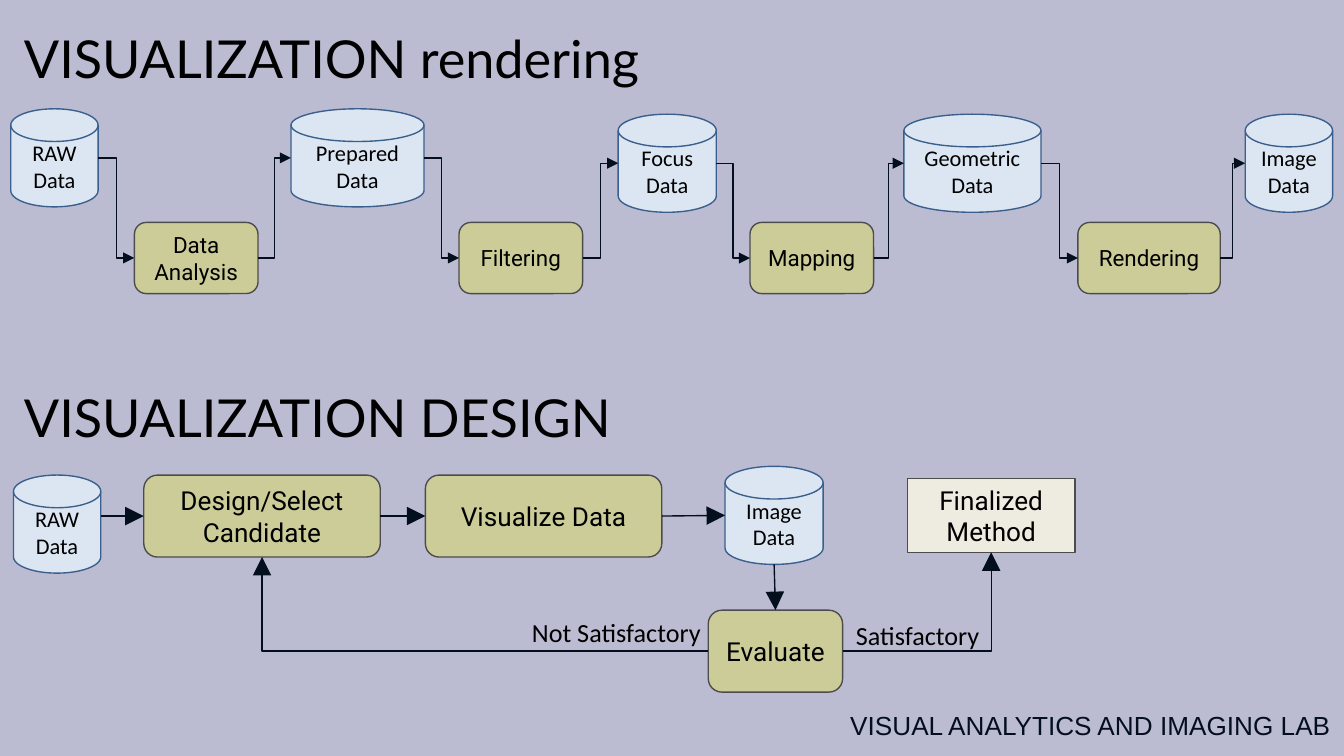
import copy

import pptx
import pptx.dml.color
import pptx.enum.shapes
import pptx.enum.text
import pptx.oxml
import pptx.oxml.ns
import pptx.util

color = pptx.dml.color.RGBColor.from_string
DISK = pptx.enum.shapes.MSO_SHAPE.FLOWCHART_MAGNETIC_DISK
BOX = pptx.enum.shapes.MSO_SHAPE.ROUNDED_RECTANGLE
RESULT = pptx.enum.shapes.MSO_SHAPE.RECTANGLE
STRAIGHT = pptx.enum.shapes.MSO_CONNECTOR.STRAIGHT
ELBOW = pptx.enum.shapes.MSO_CONNECTOR.ELBOW
ALIGN = pptx.enum.text.PP_ALIGN
TOP, LEFT, BOTTOM, RIGHT = range(4)
INK = "040F1D"

# fill, line, font
STYLES = {
    DISK: ("DCE6F2", "3A5F8C", "Calibri"),
    BOX: ("CCCC99", "4C4C4C", "Roboto"),
    RESULT: ("EEECE1", "4C4C4C", "Roboto"),
}

presentation = pptx.Presentation()
presentation.slide_width = pptx.util.Inches(10)
presentation.slide_height = presentation.slide_width * 9 // 16
slide = presentation.slides.add_slide(presentation.slide_layouts[6])
slide.background.fill.solid()
slide.background.fill.fore_color.rgb = color("BBBCD2")

# A grid of 100 columns and 56.25 rows makes square cells.
COLUMN = presentation.slide_width / 100
ROW = presentation.slide_height / 56.25


def add_node(kind, text, left, top, width, height, size):
    fill, line, font = STYLES[kind]
    shape = slide.shapes.add_shape(
        kind, int(left * COLUMN), int(top * ROW), int(width * COLUMN), int(height * ROW))
    shape.shadow.inherit = False
    shape.fill.solid()
    shape.fill.fore_color.rgb = color(fill)
    shape.line.color.rgb = color(line)
    shape.line.width = pptx.util.Pt(0.75)
    text_frame = shape.text_frame
    text_frame.text = text
    text_frame.word_wrap = True
    text_frame.vertical_anchor = pptx.enum.text.MSO_ANCHOR.MIDDLE
    for paragraph in text_frame.paragraphs:
        paragraph.alignment = ALIGN.CENTER
        for run in paragraph.runs:
            run.font.name = font
            run.font.size = pptx.util.Pt(size)
            run.font.color.rgb = color("000000")
        # A line break takes the format of the text around it
        for line_break in paragraph._p.findall(pptx.oxml.ns.qn("a:br")):
            line_break.append(copy.deepcopy(paragraph.runs[0].font._rPr))
    return shape


def add_arrow(kind, source, source_side, target, target_side, head="med"):
    """Draw an arrow between side middles, joined wherever the side is not a disk's."""
    points = []
    for shape, side in ((source, source_side), (target, target_side)):
        across, down = {TOP: (0.5, 0), LEFT: (0, 0.5), BOTTOM: (0.5, 1), RIGHT: (1, 0.5)}[side]
        points += [int(shape.left + across * shape.width), int(shape.top + down * shape.height)]
    connector = slide.shapes.add_connector(kind, *points)
    if source.auto_shape_type != DISK:
        connector.begin_connect(source, source_side)
    if target.auto_shape_type != DISK:
        connector.end_connect(target, target_side)
    connector.line.color.rgb = color(INK)
    connector.line.width = pptx.util.Pt(0.75)
    namespace = pptx.oxml.ns.nsdecls("a")
    connector.line._get_or_add_ln().append(pptx.oxml.parse_xml(
        f'<a:tailEnd {namespace} type="triangle" w="{head}" len="{head}"/>'))
    properties = connector._element.spPr
    properties.append(pptx.oxml.parse_xml(f"<a:effectLst {namespace}/>"))
    if kind == ELBOW and target_side == BOTTOM:
        properties.find(pptx.oxml.ns.qn("a:prstGeom")).set("prst", "bentConnector2")
    return connector


# Rendering pipeline: data and processing steps alternate
pipeline = [
    (DISK, "RAW\vData", 0.8, 8.1, 6.5),
    (BOX, "Data\vAnalysis", 10, 16.55, 9.2),
    (DISK, "Prepared\vData", 21.65, 8.1, 9.9),
    (BOX, "Filtering", 34.15, 16.55, 9.2),
    (DISK, "Focus\vData", 46, 8.5, 7.3),
    (BOX, "Mapping", 55.8, 16.55, 9.2),
    (DISK, "Geometric\vData", 67.25, 8.5, 10.2),
    (BOX, "Rendering", 80.2, 16.55, 10.6),
    (DISK, "Image\vData", 92.65, 8.5, 6.5),
]
stages = [add_node(*step, 7.3 if step[0] == DISK else 5.3, 12) for step in pipeline]
for source, target in zip(stages, stages[1:]):
    add_arrow(ELBOW, source, RIGHT, target, LEFT)

# Design loop
raw_data = add_node(DISK, "RAW\vData", 1, 35.35, 6.5, 7.3, 12)
design = add_node(BOX, "Design/Select\vCandidate", 10.7, 35.35, 17.6, 6.1, 14)
visualize = add_node(BOX, "Visualize Data", 31.65, 35.35, 17.6, 6.1, 14)
image_data = add_node(DISK, "Image\nData", 53.95, 34.7, 7.3, 7.3, 12)
evaluate = add_node(BOX, "Evaluate", 52.7, 45.4, 10, 6.1, 14)
finalized = add_node(RESULT, "Finalized Method", 67.5, 35.6, 12.5, 5.5, 14)

add_arrow(STRAIGHT, design, RIGHT, visualize, LEFT, "lg")
add_arrow(STRAIGHT, visualize, RIGHT, image_data, LEFT, "lg")
add_arrow(STRAIGHT, image_data, BOTTOM, evaluate, TOP, "lg")
add_arrow(ELBOW, evaluate, LEFT, design, BOTTOM, "lg")
add_arrow(ELBOW, evaluate, RIGHT, finalized, BOTTOM, "lg")

# The raw data disk sits lower than the box, so its arrow is levelled with the box
raw_arrow = add_arrow(STRAIGHT, raw_data, RIGHT, design, LEFT, "lg")
raw_arrow.begin_y = raw_arrow.end_y

# Titles, branch labels and footer
labels = [
    ("VISUALIZATION rendering", 0.8, 1.5, 90.8, 5.7, "Lato", 28, "000000", ALIGN.LEFT, True),
    ("VISUALIZATION DESIGN", 0.8, 28.2, 90.8, 5.7, "Lato", 28, "000000", ALIGN.LEFT, True),
    ("Not Satisfactory", 38.6, 45.4, 14.7, 3.4, "Calibri", 14, "000000", ALIGN.LEFT, False),
    ("Satisfactory", 62.7, 45.6, 11.3, 3.4, "Calibri", 14, "000000", ALIGN.LEFT, False),
    ("VISUAL ANALYTICS AND IMAGING LAB", 49.2, 52.3, 50.8, 3.4, "Arial", 14, INK,
     ALIGN.RIGHT, True),
]
for text, left, top, width, height, font, size, ink, alignment, wrap in labels:
    label = slide.shapes.add_textbox(
        int(left * COLUMN), int(top * ROW), int(width * COLUMN), int(height * ROW))
    label.text_frame.text = text
    label.text_frame.word_wrap = wrap
    paragraph = label.text_frame.paragraphs[0]
    paragraph.alignment = alignment
    run = paragraph.runs[0]
    run.font.name = font
    run.font.size = pptx.util.Pt(size)
    run.font.color.rgb = color(ink)

presentation.save("out.pptx")
